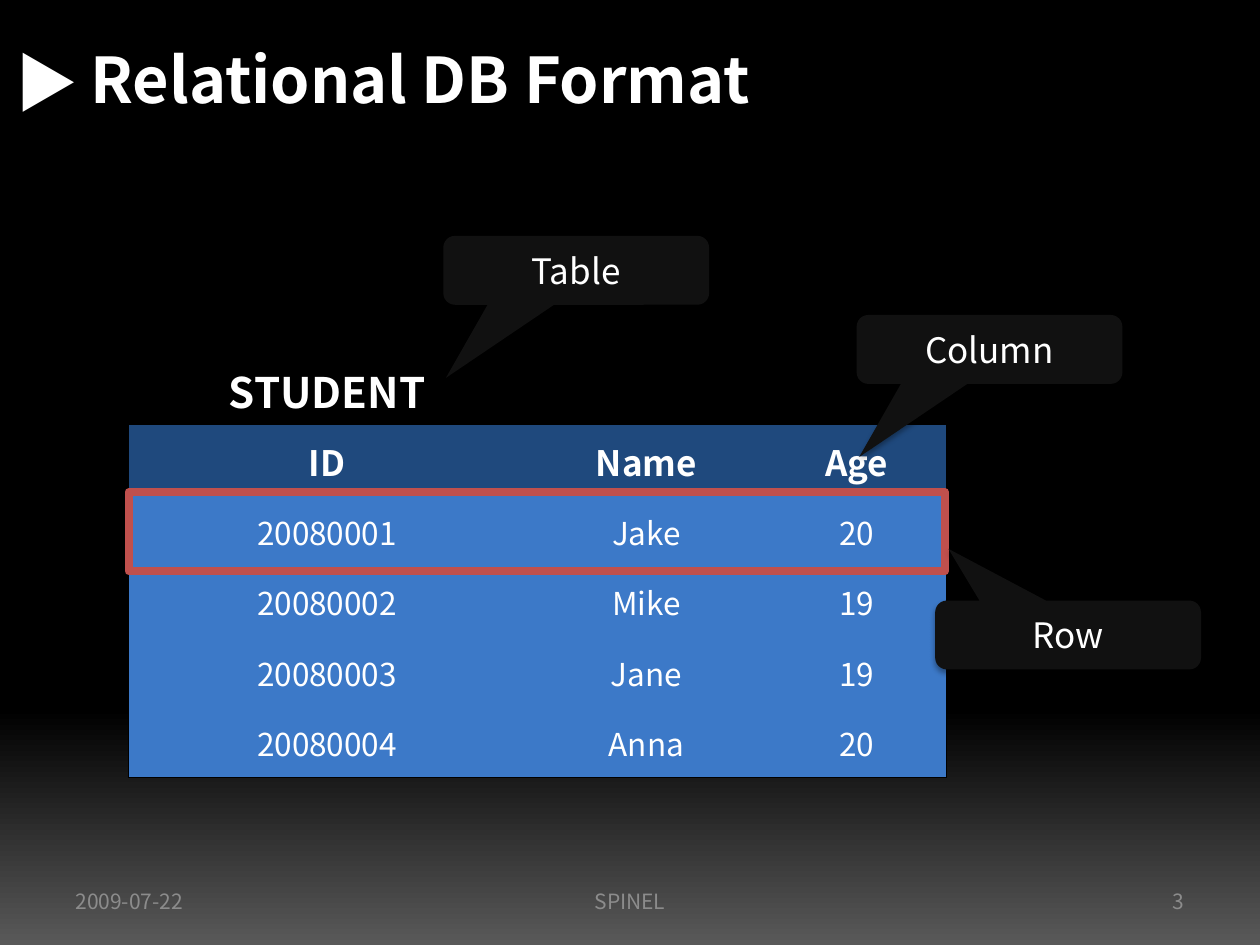
from lxml import etree
from pptx import Presentation
from pptx.dml.color import RGBColor
from pptx.enum import shapes, text
from pptx.oxml import parse_xml
from pptx.oxml.ns import nsdecls, qn
from pptx.util import Pt

FONT = "Noto Sans CJK KR"
BLACK = RGBColor(0, 0, 0)
WHITE = RGBColor(255, 255, 255)
GREY = RGBColor(0x8C, 0x8C, 0x8C)
ASH = RGBColor(0x59, 0x59, 0x59)
NAVY = RGBColor(0x1F, 0x49, 0x7D)
BLUE = RGBColor(0x3C, 0x79, 0xC8)
RED = RGBColor(0xC0, 0x50, 0x4D)
COAL = RGBColor(0x11, 0x11, 0x11)
LEFT, MID, RIGHT = text.PP_ALIGN.LEFT, text.PP_ALIGN.CENTER, text.PP_ALIGN.RIGHT


def write(frame, words, size, color=WHITE, bold=False, align=MID):
    frame.vertical_anchor = text.MSO_ANCHOR.MIDDLE
    para = frame.paragraphs[0]
    para.text = words
    para.alignment = align
    font = para.font
    font.name, font.size, font.bold = FONT, Pt(size), bold
    font.color.rgb = color
    # Symbols such as ▶ take the East Asian font
    props = para._p.pPr.find(qn("a:defRPr"))
    etree.SubElement(props, qn("a:ea"), typeface=FONT)


def edge(cell, side, shown):
    """Return a one-point black cell border, or an empty one."""
    fill = '<a:solidFill><a:srgbClr val="000000"/></a:solidFill>' if shown else "<a:noFill/>"
    return parse_xml(f'<a:ln{side} {nsdecls("a")} w="12700">{fill}</a:ln{side}>')


deck = Presentation()
deck.slide_width, deck.slide_height = Pt(720), Pt(540)
slide = deck.slides.add_slide(deck.slide_layouts[6])

back = slide.background.fill
back.gradient()
back.gradient_angle = 90
for stop, color, pos in zip(back.gradient_stops, (ASH, BLACK), (0, 0.25)):
    stop.color.rgb = color
    stop.position = pos

# Title with its marker, and the footer
labels = [
    ("▶", 2, 21, 51, 51, 36, WHITE, False, LEFT),
    ("Relational DB Format", 44.64, 0, 648, 90, 36, WHITE, True, LEFT),
    ("2009-07-22", 36, 500.5, 168, 28.75, 12, GREY, False, LEFT),
    ("SPINEL", 246, 500.5, 228, 28.75, 12, GREY, False, MID),
    ("3", 516, 500.5, 168, 28.75, 12, GREY, False, RIGHT),
]
for words, x, y, w, h, size, color, bold, align in labels:
    box = slide.shapes.add_textbox(Pt(x), Pt(y), Pt(w), Pt(h))
    box.text_frame.word_wrap = True
    write(box.text_frame, words, size, color, bold, align)

# Student table
rows = [
    ("STUDENT", "", ""),
    ("ID", "Name", "Age"),
    ("20080001", "Jake", "20"),
    ("20080002", "Mike", "19"),
    ("20080003", "Jane", "19"),
    ("20080004", "Anna", "20"),
]
looks = [(BLACK, 24, True), (NAVY, 20, True)] + [(BLUE, 18, False)] * 4
widths = (226.8, 138.24, 102.24)
grid = slide.shapes.add_table(
    len(rows), 3, Pt(73.5), Pt(202.5), Pt(sum(widths)), Pt(241.8)).table
for col, width in zip(grid.columns, widths):
    col.width = Pt(width)
for r, (row, (fill, size, bold)) in enumerate(zip(rows, looks)):
    grid.rows[r].height = Pt(40.3)
    for c, words in enumerate(row):
        cell = grid.cell(r, c)
        cell.margin_left = cell.margin_right = cell.margin_top = Pt(0.75)
        cell.margin_bottom = 0
        cell.vertical_anchor = text.MSO_ANCHOR.MIDDLE
        cell.fill.solid()
        cell.fill.fore_color.rgb = fill
        if words:
            write(cell.text_frame, words, size, WHITE, bold)
        sides = {"L": c == 0, "R": c == 2, "T": r == 0, "B": r == len(rows) - 1}
        props = cell._tc.get_or_add_tcPr()
        for i, (side, shown) in enumerate(sides.items()):
            props.insert(i, edge(cell, side, shown))

# Frame round the first record
frame = slide.shapes.add_shape(
    shapes.MSO_SHAPE.RECTANGLE, Pt(73.5), Pt(281.2), Pt(466.5), Pt(45.3))
frame.shadow.inherit = False
frame.fill.background()
frame.line.color.rgb = RED
frame.line.width = Pt(4.5)
etree.SubElement(frame.line._get_or_add_ln(), qn("a:round"))

# Callouts, each with the place of its tip
notes = [
    ("Table", 253.3, 134.8, -0.49, 1.56),
    ("Column", 489.5, 180, -0.49, 1.56),
    ("Row", 534.4, 343.2, -0.45, -1.25),
]
for words, x, y, dx, dy in notes:
    note = slide.shapes.add_shape(
        shapes.MSO_SHAPE.ROUNDED_RECTANGULAR_CALLOUT, Pt(x), Pt(y), Pt(151.9), Pt(39.4))
    note.adjustments[0], note.adjustments[1], note.adjustments[2] = dx, dy, 0.17
    note.fill.solid()
    note.fill.fore_color.rgb = COAL
    note.line.fill.background()
    note._element.spPr.append(parse_xml(
        f'<a:effectLst {nsdecls("a")}><a:outerShdw blurRad="39400" dist="22900" '
        'dir="5400000" rotWithShape="0"><a:srgbClr val="000000">'
        '<a:alpha val="35000"/></a:srgbClr></a:outerShdw></a:effectLst>'))
    write(note.text_frame, words, 20)

deck.save("out.pptx")
